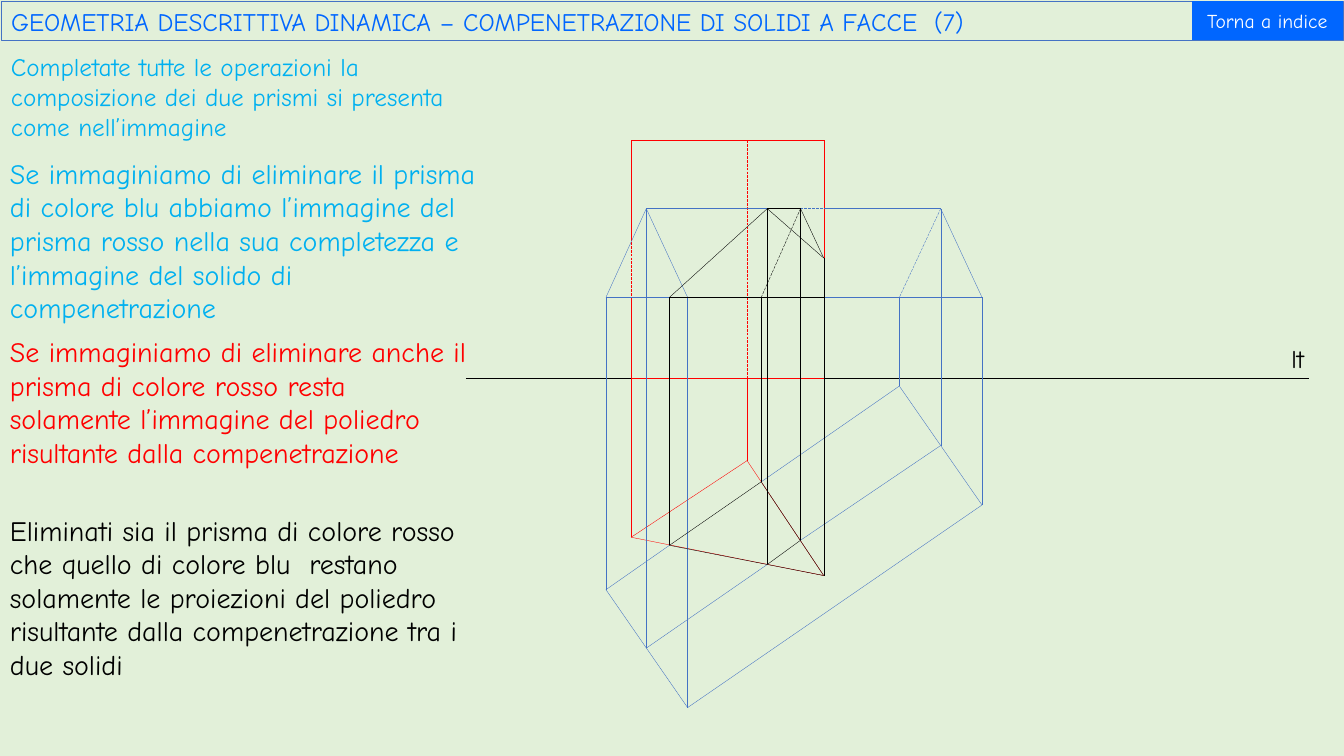
from dataclasses import dataclass
from lxml import etree
from pptx import Presentation
from pptx.dml.color import RGBColor
from pptx.enum.dml import MSO_LINE
from pptx.enum.shapes import MSO_CONNECTOR, MSO_SHAPE
from pptx.enum.text import MSO_ANCHOR, MSO_AUTO_SIZE, PP_ALIGN
from pptx.oxml.ns import qn
from pptx.util import Inches, Pt

DASH = MSO_LINE.LONG_DASH
STRAIGHT = MSO_CONNECTOR.STRAIGHT
BUTTON = MSO_SHAPE.ACTION_BUTTON_CUSTOM
LEFT, CENTER = PP_ALIGN.LEFT, PP_ALIGN.CENTER
TOP, MIDDLE = MSO_ANCHOR.TOP, MSO_ANCHOR.MIDDLE
FIXED = MSO_AUTO_SIZE.NONE


@dataclass(frozen=True)
class Theme:
    """Hold the colours, type sizes and line width."""
    font: str = "Comic Neue"
    ground: str = "E2F0D9"
    bright: str = "0066FF"
    sky: str = "00B0F0"
    blue: str = "4472C4"
    red: str = "FF0000"
    black: str = "000000"
    white: str = "FFFFFF"
    large: int = 20
    body: int = 18
    small: int = 14
    hair: float = 0.25


THEME = Theme()
WIDE, HIGH = 13.33, 7.5
BAR = 0.39

NOTES = [
    (0.01, 0.46, 4.92, 1.01, THEME.body, THEME.sky,
     "Completate tutte le operazioni la composizione dei due prismi si presenta come nell’immagine"),
    (0, 1.5, 4.82, 1.78, THEME.large, THEME.sky,
     "Se immaginiamo di eliminare il prisma di colore blu abbiamo l’immagine del prisma rosso "
     "nella sua completezza e l’immagine del solido di compenetrazione"),
    (0, 3.27, 4.82, 1.45, THEME.large, THEME.red,
     "Se immaginiamo di eliminare anche il prisma di colore rosso resta solamente l’immagine "
     "del poliedro risultante dalla compenetrazione"),
    (0, 5.04, 4.82, 1.78, THEME.large, THEME.black,
     "Eliminati sia il prisma di colore rosso che quello di colore blu  restano solamente le "
     "proiezioni del poliedro risultante dalla compenetrazione tra i due solidi"),
]

RIDGE, CUT, BASE, LAND = 0.68, 1.17, 1.56, 2.36

# Each corner has a column, a level in plan (capital) and one in elevation (small).
CORNERS = {
    "a": (0, 4.46, BASE), "b": (0.4, 5.04, RIDGE), "c": (0.81, 5.63, BASE),
    "d": (2.91, 2.44, BASE), "e": (3.32, 3.03, RIDGE), "f": (3.73, 3.62, BASE),
    "p": (0.25, 3.94, 0), "q": (1.4, 3.18, 0), "r": (2.16, 4.32, 0),
    "g": (0.63, 4.02, BASE), "h": (1.54, 3.39, BASE), "i": (1.6, 4.21, RIDGE),
    "j": (1.93, 3.97, RIDGE), "k": (2.16, 4.32, CUT), "l": (2.16, 4.32, BASE),
}
MARKS = {"m": (0.25, 0.97), "n": (0.25, BASE), "x": (2.16, RIDGE),
         "u": (0.25, LAND), "v": (1.4, LAND), "w": (2.16, LAND)}

SOLIDS = [
    (THEME.red, "pr rk pm nP vQ PQ QR PR uw", "mn qv"),
    (THEME.blue, "Aa Bb Cc Dd Ee Ff AC CF DF AG HD BI JE af bi xe ba bc ef", "jx ed"),
    (THEME.black, "lk ki ig kj gl ij GR HR GH IJ Gg Hh Ii Jj lR", "jh"),
]


def rgb(code):
    """Turn a hex code into a colour."""
    return RGBColor.from_string(code)


def write(frame, text, size=THEME.body, color=THEME.black, align=LEFT, anchor=TOP):
    """Put formatted text into a frame."""
    frame.word_wrap = True
    frame.auto_size = FIXED
    frame.vertical_anchor = anchor
    para = frame.paragraphs[0]
    para.alignment = align
    run = para.add_run()
    run.text = text
    run.font.name = THEME.font
    run.font.size = Pt(size)
    run.font.color.rgb = rgb(color)


def place(shape, box):
    """Move a shape to a box in inches."""
    shape.left, shape.top, shape.width, shape.height = map(Inches, box)


def rule(shapes, start, end, color, dash=None):
    """Draw a hairline between two points."""
    line = shapes.add_connector(STRAIGHT, *map(Inches, (*start, *end)))
    line.line.color.rgb = rgb(color)
    line.line.width = Pt(THEME.hair)
    if dash:
        line.line.dash_style = dash
    etree.SubElement(line._element.spPr, qn("a:effectLst"))


def label(slide, box, text, **style):
    """Add a text box."""
    write(slide.shapes.add_textbox(*map(Inches, box)).text_frame, text, **style)


def header(slide, box):
    """Set the title bar and its index button."""
    left, top, width, height = box
    title = slide.shapes.title
    place(title, box)
    title.line.color.rgb = rgb(THEME.blue)
    title.line.width = Pt(THEME.hair)
    write(title.text_frame, "GEOMETRIA DESCRITTIVA DINAMICA – COMPENETRAZIONE DI SOLIDI A FACCE  (7)",
          color=THEME.bright)
    wide = 1.5
    spot = left + width - wide, top, wide, height
    button = slide.shapes.add_shape(BUTTON, *map(Inches, spot))
    button.shadow.inherit = False
    button.fill.solid()
    button.fill.fore_color.rgb = rgb(THEME.bright)
    button.line.fill.background()
    write(button.text_frame, "Torna a indice", size=THEME.small, color=THEME.white,
          align=CENTER, anchor=MIDDLE)


def notes(slide):
    """Stack the four comments on the left."""
    for *box, size, color, text in NOTES:
        label(slide, box, text, size=size, color=color)


def ground(slide, box):
    """Draw the ground line with its name."""
    left, top, width, height = box
    rule(slide.shapes, (left, top + height), (left + width, top + height), THEME.black)
    label(slide, (left + width - 0.27, top, 0.45, height), "lt")


def figure(slide, left, top):
    """Draw both prisms and their common solid in plan and elevation."""
    spots = dict(MARKS)
    for name, (col, plan, rise) in CORNERS.items():
        spots[name.upper()] = col, plan
        spots[name] = col, rise
    spots = {name: (left + x, top + y) for name, (x, y) in spots.items()}
    for color, seen, hidden in SOLIDS:
        group = slide.shapes.add_group_shape()
        for edges, dash in ((seen, None), (hidden, DASH)):
            for start, end in edges.split():
                rule(group.shapes, spots[start], spots[end], color, dash)


def main():
    """Build and save the slide."""
    deck = Presentation()
    deck.slide_width, deck.slide_height = Inches(WIDE), Inches(HIGH)
    slide = deck.slides.add_slide(deck.slide_layouts[5])
    slide.background.fill.solid()
    slide.background.fill.fore_color.rgb = rgb(THEME.ground)
    header(slide, (0.01, 0.01, WIDE - 0.02, BAR))
    notes(slide)
    ground(slide, (4.62, 3.36, 8.36, BAR))
    figure(slide, 6.01, 1.39)
    deck.save("out.pptx")


if __name__ == "__main__":
    main()
